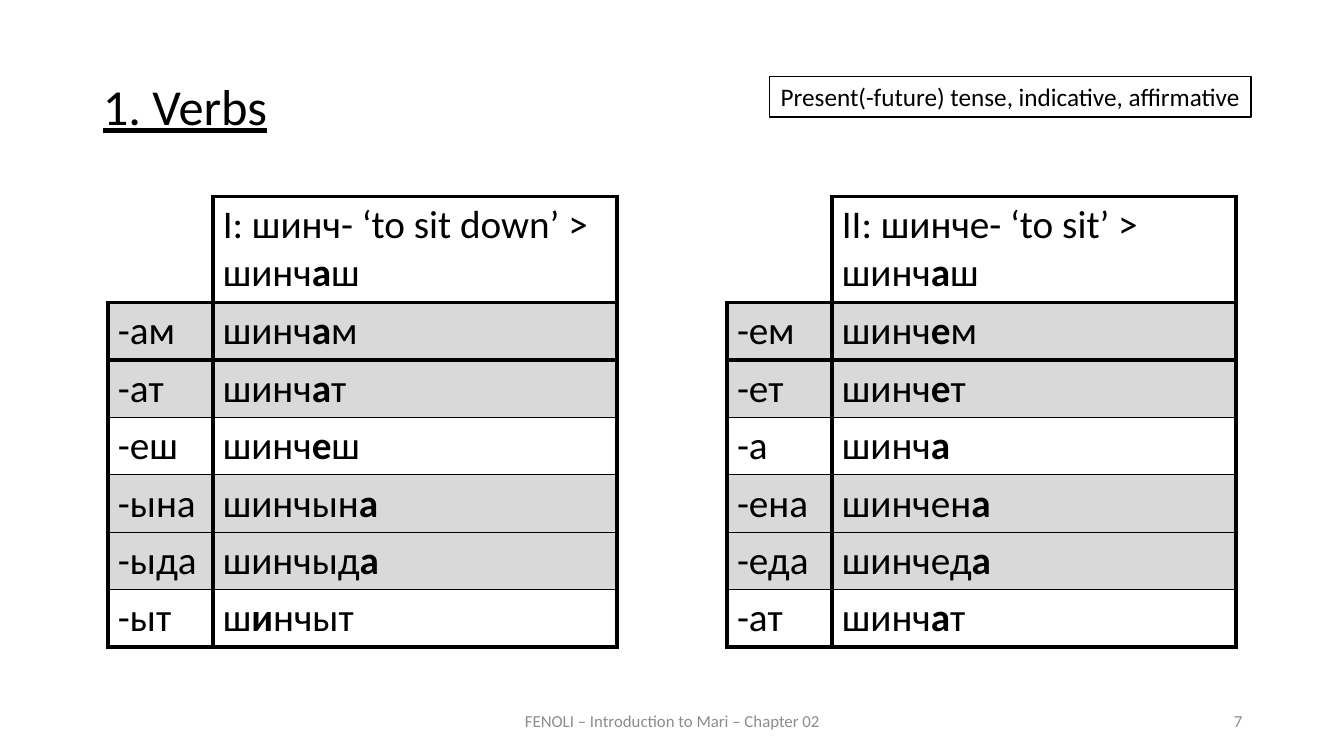
from lxml import etree
from pptx import Presentation
from pptx import util as u
from pptx.dml.color import RGBColor
from pptx.enum import shapes, text
from pptx.oxml.ns import qn

BLACK, WHITE, SHADE, MUTED = "000000", "FFFFFF", "D9D9D9", "8C8C8C"
HEAVY_ROW_EDGES = (0, 1, 2, 7)
SHADED_ROWS = (1, 2, 4, 5)
HEADER_HEIGHT, ROW_HEIGHT = 1.05, 0.57
COLUMN_WIDTHS = (1.04, 4.01)

FIRST_CONJUGATION = [
    ("", "I: шинч- ‘to sit down’ >\nшинч*а*ш"),
    ("-ам", "шинч*а*м"),
    ("-ат", "шинч*а*т"),
    ("-еш", "шинч*е*ш"),
    ("-ына", "шинчын*а*"),
    ("-ыда", "шинчыд*а*"),
    ("-ыт", "ш*и*нчыт"),
]
SECOND_CONJUGATION = [
    ("", "II: шинче- ‘to sit’ >\nшинч*а*ш"),
    ("-ем", "шинч*е*м"),
    ("-ет", "шинч*е*т"),
    ("-а", "шинч*а*"),
    ("-ена", "шинчен*а*"),
    ("-еда", "шинчед*а*"),
    ("-ат", "шинч*а*т"),
]


def color(hex_code):
    return RGBColor.from_string(hex_code)


class VerbSlide:
    """Holds the text style and the slide, and adds each kind of element."""

    def __init__(self, slide, font="Calibri"):
        self.slide = slide
        self.font = font

    def style(self, run, size, ink=BLACK, bold=False, underline=False):
        run.font.name = self.font
        run.font.size = u.Pt(size)
        run.font.color.rgb = color(ink)
        run.font.bold = bold
        run.font.underline = underline

    def heading(self, words, left, top, width, height):
        title = self.slide.shapes.title
        title.left, title.top = u.Inches(left), u.Inches(top)
        title.width, title.height = u.Inches(width), u.Inches(height)
        frame = title.text_frame
        frame.text = words
        frame.auto_size = text.MSO_AUTO_SIZE.NONE
        frame.vertical_anchor = text.MSO_ANCHOR.TOP
        paragraph = frame.paragraphs[0]
        paragraph.alignment = text.PP_ALIGN.JUSTIFY
        paragraph.line_spacing = 0.9
        self.style(paragraph.runs[0], 36, underline=True)

    def footer(self, words, left, width, alignment):
        note = self.slide.shapes.add_textbox(
            u.Inches(left), u.Inches(6.95), u.Inches(width), u.Inches(0.4))
        frame = note.text_frame
        frame.word_wrap = True
        frame.vertical_anchor = text.MSO_ANCHOR.MIDDLE
        frame.text = words
        frame.paragraphs[0].alignment = alignment
        self.style(frame.paragraphs[0].runs[0], 12, MUTED)

    def label(self, words, left, top, width, height):
        box = self.slide.shapes.add_shape(
            shapes.MSO_SHAPE.RECTANGLE,
            u.Inches(left), u.Inches(top), u.Inches(width), u.Inches(height))
        box.shadow.inherit = False
        box.fill.solid()
        box.fill.fore_color.rgb = color(WHITE)
        box.line.color.rgb = color(BLACK)
        box.line.width = u.Pt(1)
        frame = box.text_frame
        frame.word_wrap = False
        frame.text = words
        frame.paragraphs[0].alignment = text.PP_ALIGN.CENTER
        self.style(frame.paragraphs[0].runs[0], 18)

    def border(self, cell, side, points):
        edge = etree.SubElement(cell._tc.get_or_add_tcPr(), qn(f"a:ln{side}"))
        edge.set("w", str(u.Pt(points)))
        if points:
            ink = etree.SubElement(edge, qn("a:solidFill"))
            etree.SubElement(ink, qn("a:srgbClr")).set("val", BLACK)
        else:
            etree.SubElement(edge, qn("a:noFill"))

    def stressed(self, cell, words):
        cell.text_frame.text = "\n" * words.count("\n")
        for paragraph, line in zip(cell.text_frame.paragraphs, words.split("\n")):
            for index, part in enumerate(line.split("*")):
                if part:
                    run = paragraph.add_run()
                    run.text = part
                    self.style(run, 28, bold=index % 2 == 1)

    def conjugation(self, forms, left, top):
        height = HEADER_HEIGHT + ROW_HEIGHT * (len(forms) - 1)
        table = self.slide.shapes.add_table(
            len(forms), len(COLUMN_WIDTHS), u.Inches(left), u.Inches(top),
            u.Inches(sum(COLUMN_WIDTHS)), u.Inches(height)).table
        table.first_row = table.horz_banding = False
        for column, width in zip(table.columns, COLUMN_WIDTHS):
            column.width = u.Inches(width)
        for r, row in enumerate(forms):
            table.rows[r].height = u.Inches(ROW_HEIGHT if r else HEADER_HEIGHT)
            upper, lower = (3 if edge in HEAVY_ROW_EDGES else 1 for edge in (r, r + 1))
            for c, words in enumerate(row):
                cell = table.cell(r, c)
                self.stressed(cell, words)
                outer = 3 if words else 0
                widths = (outer, 3, upper if words else 0, lower)
                for side, points in zip("LRTB", widths):
                    self.border(cell, side, points)
                if words:
                    cell.fill.solid()
                    cell.fill.fore_color.rgb = color(SHADE if r in SHADED_ROWS else WHITE)
                else:
                    cell.fill.background()


def main():
    deck = Presentation()
    deck.slide_width, deck.slide_height = u.Inches(13.33), u.Inches(7.5)
    verbs = VerbSlide(deck.slides.add_slide(deck.slide_layouts[5]))
    verbs.heading("1. Verbs", 0.92, 0.76, 6.5, 0.7)
    verbs.footer("FENOLI – Introduction to Mari – Chapter 02", 4.42, 4.5, text.PP_ALIGN.CENTER)
    verbs.footer("7", 9.42, 3, text.PP_ALIGN.RIGHT)
    verbs.conjugation(FIRST_CONJUGATION, 1.07, 1.95)
    verbs.conjugation(SECOND_CONJUGATION, 7.21, 1.95)
    verbs.label("Present(-future) tense, indicative, affirmative", 7.63, 0.76, 4.78, 0.4)
    deck.save("out.pptx")


if __name__ == "__main__":
    main()
